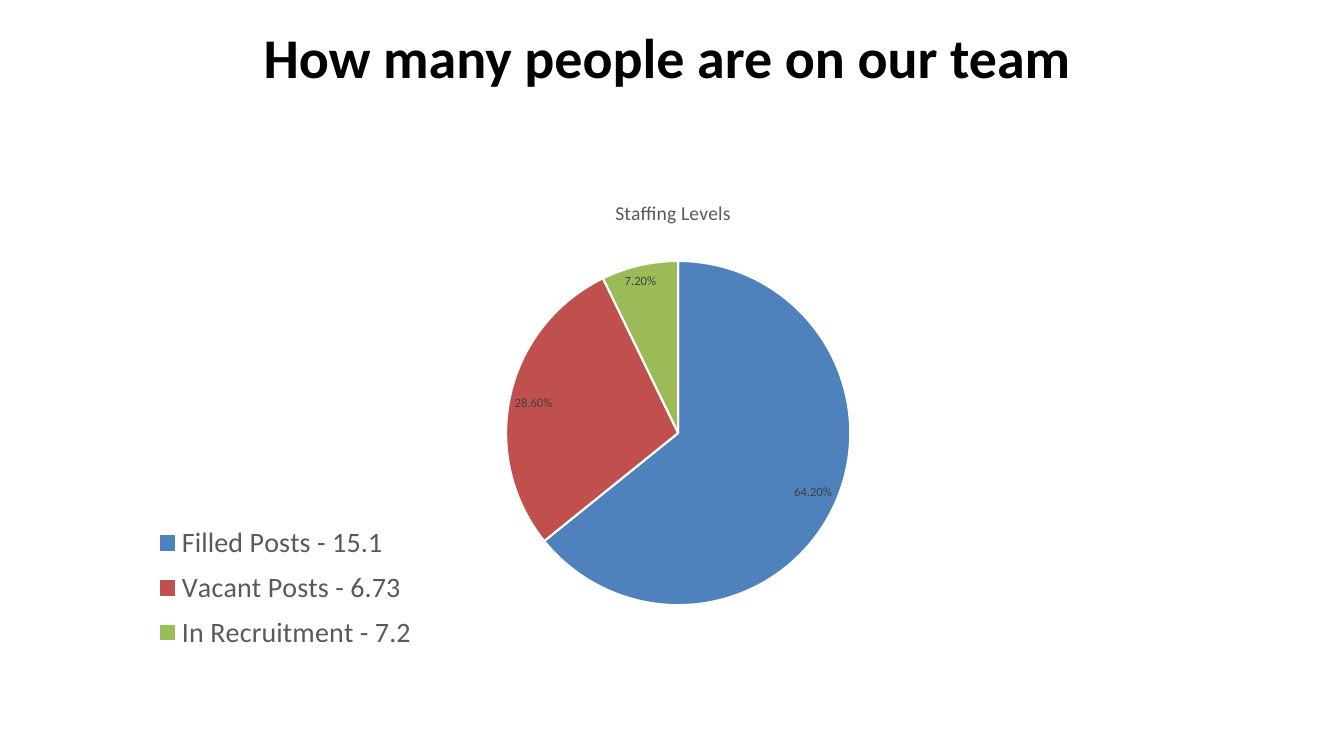
from lxml import etree
from pptx import Presentation
from pptx.chart.data import CategoryChartData
from pptx.dml.color import RGBColor
from pptx.enum.chart import XL_CHART_TYPE, XL_LABEL_POSITION, XL_LEGEND_POSITION
from pptx.enum.text import MSO_ANCHOR, PP_ALIGN
from pptx.oxml.ns import qn
from pptx.util import Cm, Pt

BLACK = RGBColor(0x00, 0x00, 0x00)
WHITE = RGBColor(0xFF, 0xFF, 0xFF)
GREY = RGBColor(0x59, 0x59, 0x59)
DARK_GREY = RGBColor(0x40, 0x40, 0x40)
BLUE = RGBColor(0x4F, 0x81, 0xBD)
RED = RGBColor(0xC0, 0x50, 0x4D)
GREEN = RGBColor(0x9B, 0xBB, 0x59)

STAFFING = [
    ("Filled Posts - 15.1", 0.642, BLUE),
    ("Vacant Posts - 6.73", 0.286, RED),
    ("In Recruitment - 7.2", 0.072, GREEN),
]


def write(tf, text, size, color, bold=False):
    p = tf.paragraphs[0]
    p.alignment = PP_ALIGN.CENTER
    r = p.add_run()
    r.text = text
    r.font.name = "Calibri"
    r.font.size = Pt(size)
    r.font.bold = bold
    r.font.color.rgb = color


def place(part, index, **fractions):
    """Fix a chart part at fractions of the chart's width and height.

    The layout element goes in as child number index of the part.
    """
    for old in part.findall(qn("c:layout")):
        part.remove(old)
    layout = etree.Element(qn("c:layout"))
    part.insert(index, layout)
    manual = etree.SubElement(layout, qn("c:manualLayout"))
    if part.tag == qn("c:plotArea"):
        etree.SubElement(manual, qn("c:layoutTarget")).set("val", "inner")
    for axis in "xy":
        etree.SubElement(manual, qn(f"c:{axis}Mode")).set("val", "edge")
    for key, value in fractions.items():
        etree.SubElement(manual, qn(f"c:{key}")).set("val", str(value))


prs = Presentation()
prs.slide_width, prs.slide_height = Cm(33.87), Cm(19.05)
s = prs.slides.add_slide(prs.slide_layouts[6])

# Heading
tf = s.shapes.add_textbox(Cm(1.73), Cm(0.33), Cm(30.48), Cm(2.16)).text_frame
tf.word_wrap = True
tf.vertical_anchor = MSO_ANCHOR.MIDDLE
write(tf, "How many people are on our team ", size=40, color=BLACK, bold=True)

# Staffing pie
data = CategoryChartData(number_format="0.00%")
data.categories = [name for name, _, _ in STAFFING]
data.add_series("Series 1", [share for _, share, _ in STAFFING])
chart = s.shapes.add_chart(XL_CHART_TYPE.PIE, Cm(1.7), Cm(4.44),
                           Cm(30.48), Cm(12.57), data).chart
chart.font.name = "Calibri"
chart.font.size = Pt(10)

title = chart.chart_title
write(title.text_frame, "Staffing Levels", size=14, color=GREY)

plot = chart.plots[0]
plot.vary_by_categories = True
for i, (_, _, color) in enumerate(STAFFING):
    fmt = plot.series[0].points[i].format
    fmt.fill.solid()
    fmt.fill.fore_color.rgb = color
    fmt.line.color.rgb = WHITE
    fmt.line.width = Pt(1.5)

plot.has_data_labels = True
labels = plot.data_labels
labels.show_value = True
labels.show_percentage = False
labels.number_format = "0.00%"
labels.number_format_is_linked = False
labels.position = XL_LABEL_POSITION.BEST_FIT

chart.has_legend = True
legend = chart.legend
legend.position = XL_LEGEND_POSITION.BOTTOM
legend.include_in_layout = False

for font, size, color in [(labels.font, 9, DARK_GREY), (legend.font, 20, GREY)]:
    font.name = "Calibri"
    font.size = Pt(size)
    font.color.rgb = color

# Title above, pie in the centre, legend at the lower left
place(title._element, 1, x=0.45, y=0.04)
place(chart._chartSpace.chart.plotArea, 0, x=0.36, y=0.17, w=0.29, h=0.69)
place(legend._element, 1, x=0.07, y=0.68, w=0.22, h=0.29)

prs.save("out.pptx")
